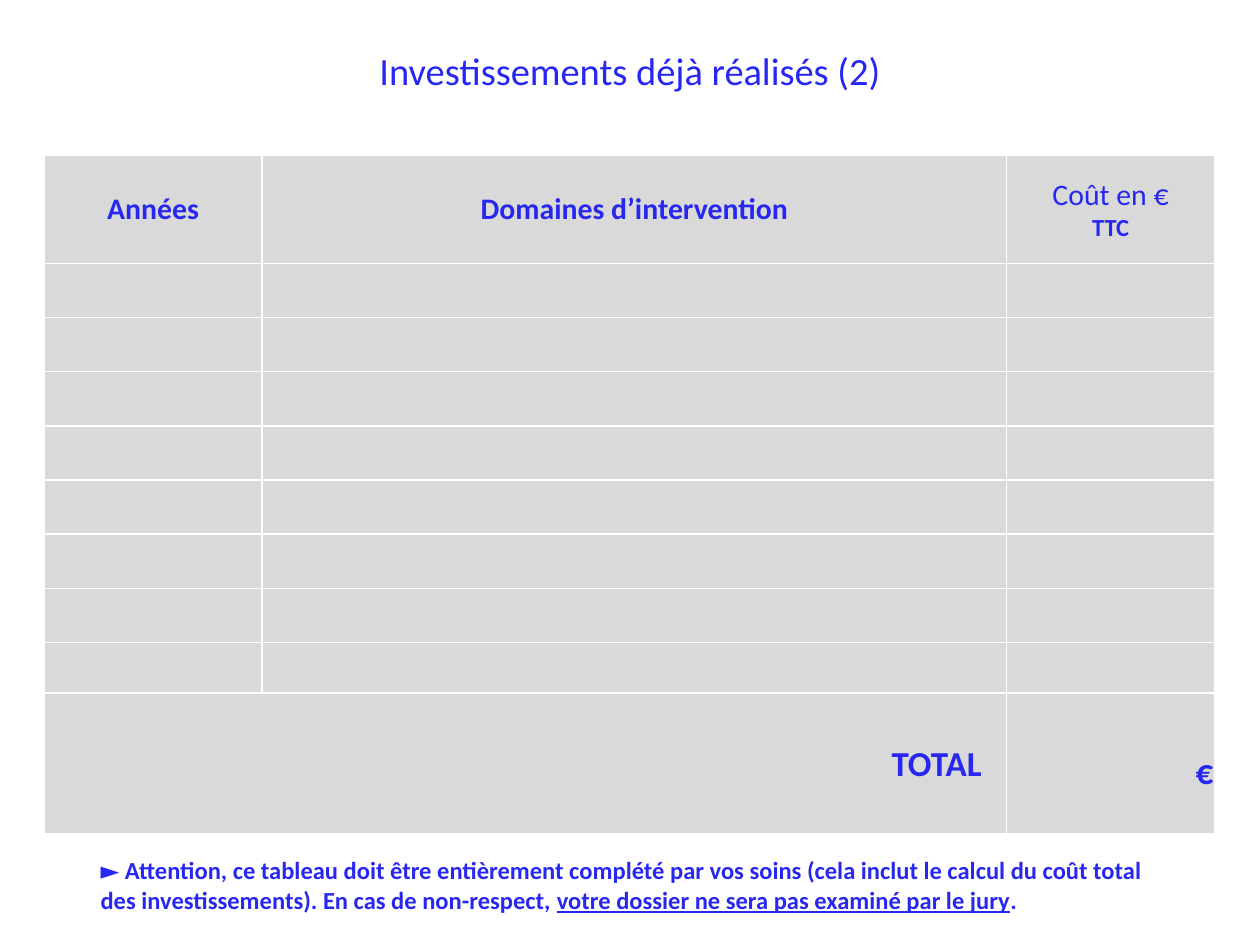
import pptx
import pptx.dml.color
import pptx.enum.text
import pptx.oxml.ns
import pptx.util
from lxml import etree

Inches = pptx.util.Inches
Pt = pptx.util.Pt
Align = pptx.enum.text.PP_ALIGN
Anchor = pptx.enum.text.MSO_ANCHOR
qn = pptx.oxml.ns.qn

BLUE = pptx.dml.color.RGBColor(0x27, 0x27, 0xF1)
GREY = pptx.dml.color.RGBColor(0xD9, 0xD9, 0xD9)
WHITE = pptx.dml.color.RGBColor(0xFF, 0xFF, 0xFF)
FONT = "Calibri"

COLUMNS = [1.73, 5.91, 1.65]
ENTRY_ROWS = 8
ROWS = [0.86] + [0.43] * (ENTRY_ROWS - 1) + [0.4, 1.12]


def add_run(paragraph, text, size, bold=False, underline=False):
    run = paragraph.add_run()
    run.text = text
    run.font.name = FONT
    run.font.size = Pt(size)
    run.font.bold = bold
    run.font.underline = underline
    run.font.color.rgb = BLUE


def place(shape, left, top, width, height):
    shape.left, shape.top = Inches(left), Inches(top)
    shape.width, shape.height = Inches(width), Inches(height)


def set_borders(cell, color, width):
    properties = cell._tc.get_or_add_tcPr()
    for index, side in enumerate(("lnL", "lnR", "lnT", "lnB")):
        line = etree.Element(qn(f"a:{side}"), w=str(Pt(width)))
        fill = etree.SubElement(line, qn("a:solidFill"))
        etree.SubElement(fill, qn("a:srgbClr"), val=str(color))
        properties.insert(index, line)


def style_cell(cell):
    set_borders(cell, WHITE, 1)
    cell.fill.solid()
    cell.fill.fore_color.rgb = GREY
    cell.margin_left = cell.margin_right = cell.margin_top = Inches(0.01)
    cell.margin_bottom = 0
    cell.vertical_anchor = Anchor.MIDDLE


def write_cell(cell, lines, alignment):
    """Each line is (text, size, bold) and becomes one paragraph."""
    frame = cell.text_frame
    for index, (text, size, bold) in enumerate(lines):
        paragraph = frame.add_paragraph() if index else frame.paragraphs[0]
        paragraph.alignment = alignment
        add_run(paragraph, text, size, bold)


def add_title(slide):
    title = slide.shapes.title
    place(title, 0, 0.13, 10, 0.86)
    title.text_frame.vertical_anchor = Anchor.MIDDLE
    paragraph = title.text_frame.paragraphs[0]
    paragraph.alignment = Align.CENTER
    add_run(paragraph, "Investissements déjà réalisés (2)", 22)


def add_investment_table(slide):
    table = slide.shapes.add_table(
        len(ROWS), len(COLUMNS), Inches(0.35), Inches(1.23),
        Inches(sum(COLUMNS)), Inches(sum(ROWS))).table
    table.first_row = table.horz_banding = False
    for column, width in zip(table.columns, COLUMNS):
        column.width = Inches(width)
    for row, height in zip(table.rows, ROWS):
        row.height = Inches(height)
    for cell in table.iter_cells():
        style_cell(cell)

    # Header row
    headers = [
        [("Années", 17, True)],
        [("Domaines d’intervention", 17, True)],
        [("Coût en €", 17, False), ("TTC", 14, True)],
    ]
    for column, lines in enumerate(headers):
        write_cell(table.cell(0, column), lines, Align.CENTER)

    # Total row, with its label across the first two columns
    last = len(ROWS) - 1
    label, amount = table.cell(last, 0), table.cell(last, 2)
    label.merge(table.cell(last, 1))
    label.margin_right = Inches(0.2)
    write_cell(label, [("TOTAL", 20, True)], Align.RIGHT)
    amount.margin_top = Inches(0.15)
    write_cell(amount, [("€", 20, True)], Align.RIGHT)


def add_warning(slide):
    box = slide.shapes.add_textbox(0, 0, 0, 0)
    place(box, 0.7, 6.74, 8.6, 0.57)
    box.text_frame.word_wrap = True
    paragraph = box.text_frame.paragraphs[0]
    add_run(paragraph, "► Attention, ce tableau doit être entièrement complété par "
            "vos soins (cela inclut le calcul du coût total des investissements). "
            "En cas de non-respect, ", 14, bold=True)
    add_run(paragraph, "votre dossier ne sera pas examiné par le jury", 14,
            bold=True, underline=True)
    add_run(paragraph, ".", 14, bold=True)


def main():
    presentation = pptx.Presentation()
    presentation.slide_width, presentation.slide_height = Inches(10), Inches(7.5)
    title_only = presentation.slide_layouts[5]
    slide = presentation.slides.add_slide(title_only)
    add_title(slide)
    add_investment_table(slide)
    add_warning(slide)
    presentation.save("out.pptx")


if __name__ == "__main__":
    main()
